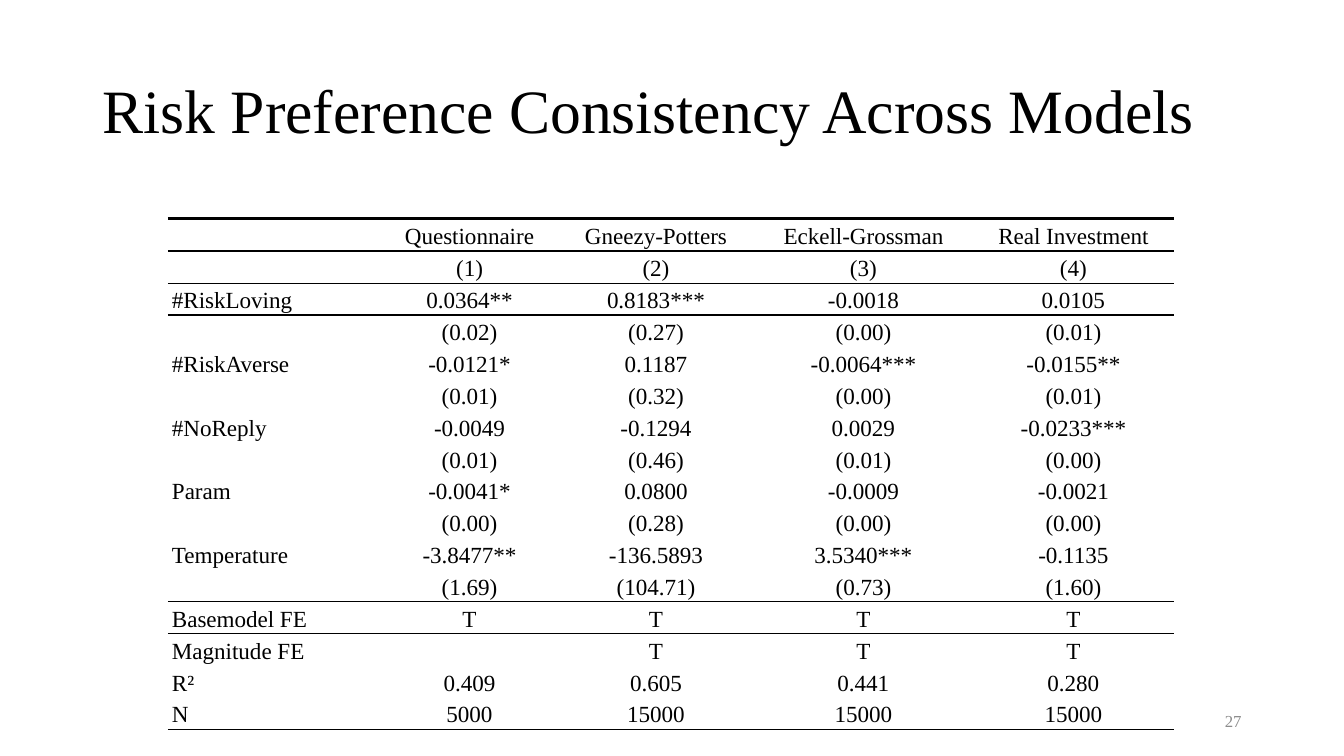
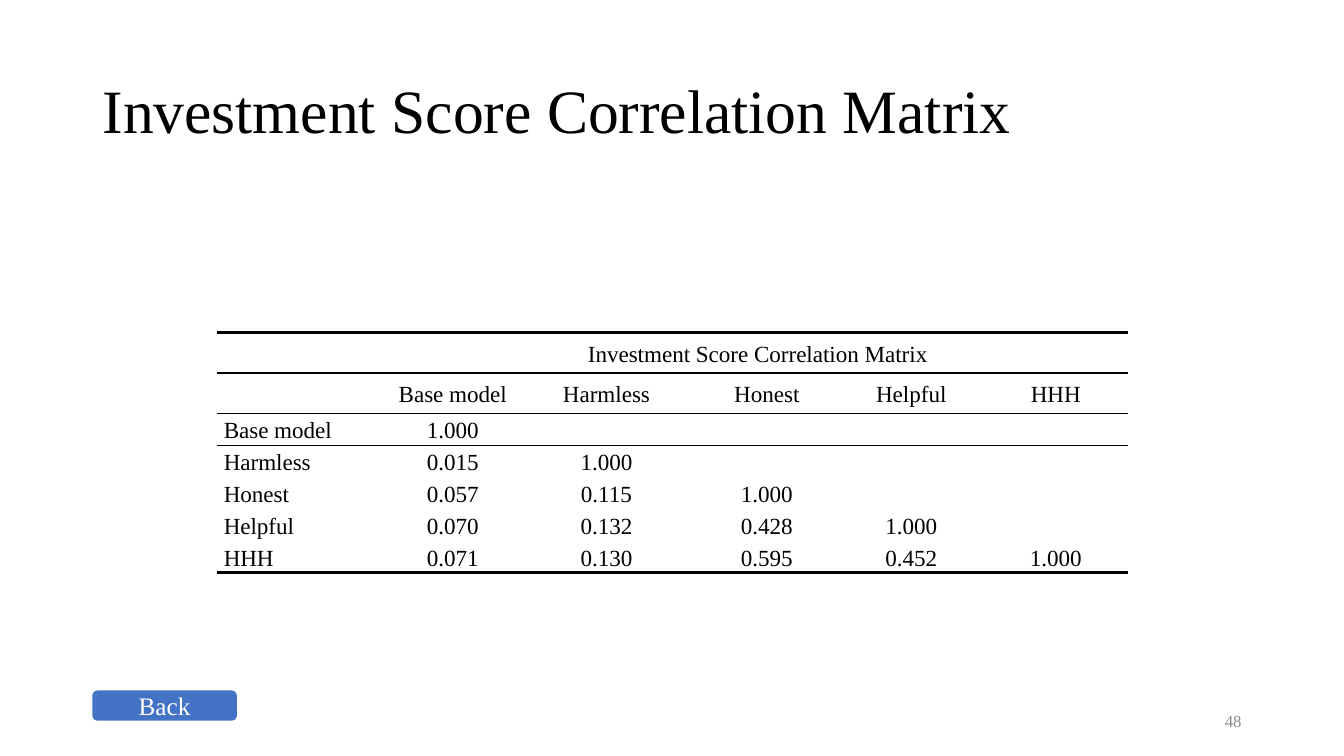
from lxml.etree import SubElement
from pptx import Presentation
from pptx.dml.color import RGBColor
from pptx.enum.shapes import MSO_SHAPE as Shape
from pptx.enum.text import MSO_ANCHOR as Anchor, MSO_AUTO_SIZE as AutoSize, PP_ALIGN as Align
from pptx.oxml.ns import qn
from pptx.util import Emu, Inches, Pt

BLACK, WHITE, GREY, BLUE = "000000", "FFFFFF", "8C8C8C", "4472C4"
THICK, THIN = 2.25, 1
NO_GRID_STYLE = "{2D5ABB26-0587-4C30-8999-92F81FD0307C}"


def color(hex_code):
    return RGBColor.from_string(hex_code)


class Deck:
    """Holds the style and the current page, on a grid of 160 columns by 150 rows."""

    font = "Times New Roman"
    table_size = 16.5

    def __init__(self):
        self.file = Presentation()
        self.file.slide_width, self.file.slide_height = Inches(13.33), Inches(7.5)
        self.column = self.file.slide_width / 160
        self.row = self.file.slide_height / 150

    def place(self, left, top, width, height):
        """Turn grid columns and rows into lengths."""
        return (Emu(int(left * self.column)), Emu(int(top * self.row)),
                Emu(int(width * self.column)), Emu(int(height * self.row)))

    def set_text(self, frame, text, size, hex_code, align=Align.LEFT, spacing=1.0):
        frame.text = text
        frame.word_wrap = True
        frame.vertical_anchor = Anchor.MIDDLE
        para = frame.paragraphs[0]
        para.alignment, para.line_spacing = align, spacing
        for span in para.runs:
            span.font.name, span.font.size = self.font, Pt(size)
            span.font.color.rgb = color(hex_code)

    def page(self, title, number):
        self.slide = self.file.slides.add_slide(self.file.slide_layouts[5])
        heading = self.slide.shapes.title
        heading.left, heading.top, heading.width, heading.height = self.place(11, 8, 138, 29)
        self.set_text(heading.text_frame, title, 44, BLACK, spacing=0.9)
        heading.text_frame.auto_size = AutoSize.NONE
        box = self.slide.shapes.add_textbox(*self.place(113, 139, 36, 8))
        self.set_text(box.text_frame, number, 12, GREY, Align.RIGHT)

    def button(self, text, left, top, width, height):
        box = self.slide.shapes.add_shape(Shape.ROUNDED_RECTANGLE,
                                          *self.place(left, top, width, height))
        box.shadow.inherit = False
        box.fill.solid()
        box.fill.fore_color.rgb = color(BLUE)
        box.line.fill.background()
        self.set_text(box.text_frame, text, 18, WHITE, Align.CENTER)

    def table(self, left, top, widths, heights, rows, rules, inset):
        """Draw a ruled table; rules maps a row boundary (0 is the top edge) to a line width."""
        area = self.place(left, top, sum(widths), sum(heights))
        table = self.slide.shapes.add_table(len(rows), len(widths), *area).table
        table.first_row = table.horz_banding = False
        table._tbl.tblPr.find(qn("a:tableStyleId")).text = NO_GRID_STYLE
        for column, width in zip(table.columns, widths):
            column.width = Emu(int(width * self.column))
        for index, (row, height, texts) in enumerate(zip(table.rows, heights, rows)):
            row.height = Emu(int(height * self.row))
            for position, (cell, text) in enumerate(zip(row.cells, texts)):
                self.fill_cell(cell, text, Align.CENTER if position else Align.LEFT, inset)
                self.rule_cell(cell, rules.get(index), rules.get(index + 1))
        return table

    def fill_cell(self, cell, text, align, inset):
        self.set_text(cell.text_frame, text, self.table_size, BLACK, align, 1.15)
        cell.vertical_anchor = Anchor.MIDDLE
        cell.margin_left = cell.margin_right = Inches(inset)
        cell.margin_top = cell.margin_bottom = 0
        cell.fill.solid()
        cell.fill.fore_color.rgb = color(WHITE)
        if not text:  # keeps an empty cell from stretching its row
            end = SubElement(cell.text_frame.paragraphs[0]._p, qn("a:endParaRPr"))
            end.set("sz", "1200")

    def rule_cell(self, cell, above, below):
        properties = cell._tc.get_or_add_tcPr()
        for tag, width in (("a:lnB", below), ("a:lnT", above)):
            if width:
                line = SubElement(properties, qn(tag), w=str(Pt(width)))
                fill = SubElement(line, qn("a:solidFill"))
                SubElement(fill, qn("a:srgbClr"), val=BLACK)
                properties.insert(0, line)


ESTIMATES = [
    ("#RiskLoving", ["0.0364**", "0.8183***", "-0.0018", "0.0105"],
     ["(0.02)", "(0.27)", "(0.00)", "(0.01)"]),
    ("#RiskAverse", ["-0.0121*", "0.1187", "-0.0064***", "-0.0155**"],
     ["(0.01)", "(0.32)", "(0.00)", "(0.01)"]),
    ("#NoReply", ["-0.0049", "-0.1294", "0.0029", "-0.0233***"],
     ["(0.01)", "(0.46)", "(0.01)", "(0.00)"]),
    ("Param", ["-0.0041*", "0.0800", "-0.0009", "-0.0021"],
     ["(0.00)", "(0.28)", "(0.00)", "(0.00)"]),
    ("Temperature", ["-3.8477**", "-136.5893", "3.5340***", "-0.1135"],
     ["(1.69)", "(104.71)", "(0.73)", "(1.60)"]),
]
SUMMARY = [
    ["Basemodel FE", "T", "T", "T", "T"],
    ["Magnitude FE", "", "T", "T", "T"],
    ["R²", "0.409", "0.605", "0.441", "0.280"],
    ["N", "5000", "15000", "15000", "15000"],
]
CORRELATIONS = {
    "Base model": ["1.000"],
    "Harmless": ["0.015", "1.000"],
    "Honest": ["0.057", "0.115", "1.000"],
    "Helpful": ["0.070", "0.132", "0.428", "1.000"],
    "HHH": ["0.071", "0.130", "0.595", "0.452", "1.000"],
}


def consistency_page(deck):
    deck.page("Risk Preference Consistency Across Models", "27")
    rows = [
        [""] * 5,
        ["", "Questionnaire", "Gneezy-Potters", "Eckell-Grossman", "Real Investment"],
        ["", "(1)", "(2)", "(3)", "(4)"],
    ]
    for name, values, errors in ESTIMATES:
        rows += [[name, *values], ["", *errors]]
    rows += SUMMARY
    deck.table(20, 37, [25.4, 21, 23.4, 26, 24], [6.4] * 3 + [6] * 14, rows,
               {1: THICK, 2: THIN, 3: THIN, 13: THIN, 17: THIN}, inset=0.04)


def correlation_page(deck):
    title = "Investment Score Correlation Matrix"
    deck.page(title, "48")
    deck.button("Back", 11, 137, 17.2, 6)
    rows = [["", title, "", "", "", ""], ["", *CORRELATIONS]]
    for name, values in CORRELATIONS.items():
        rows.append([name, *values] + [""] * (5 - len(values)))
    table = deck.table(25.8, 66, [20.3, 15.6, 21] + [17.2] * 3, [8] * 2 + [6] * 5, rows,
                       {0: THICK, 1: THIN, 2: THIN, 7: THICK}, inset=0.07)
    table.cell(0, 1).merge(table.cell(0, 5))


def main():
    deck = Deck()
    consistency_page(deck)
    correlation_page(deck)
    deck.file.save("out.pptx")


if __name__ == "__main__":
    main()
